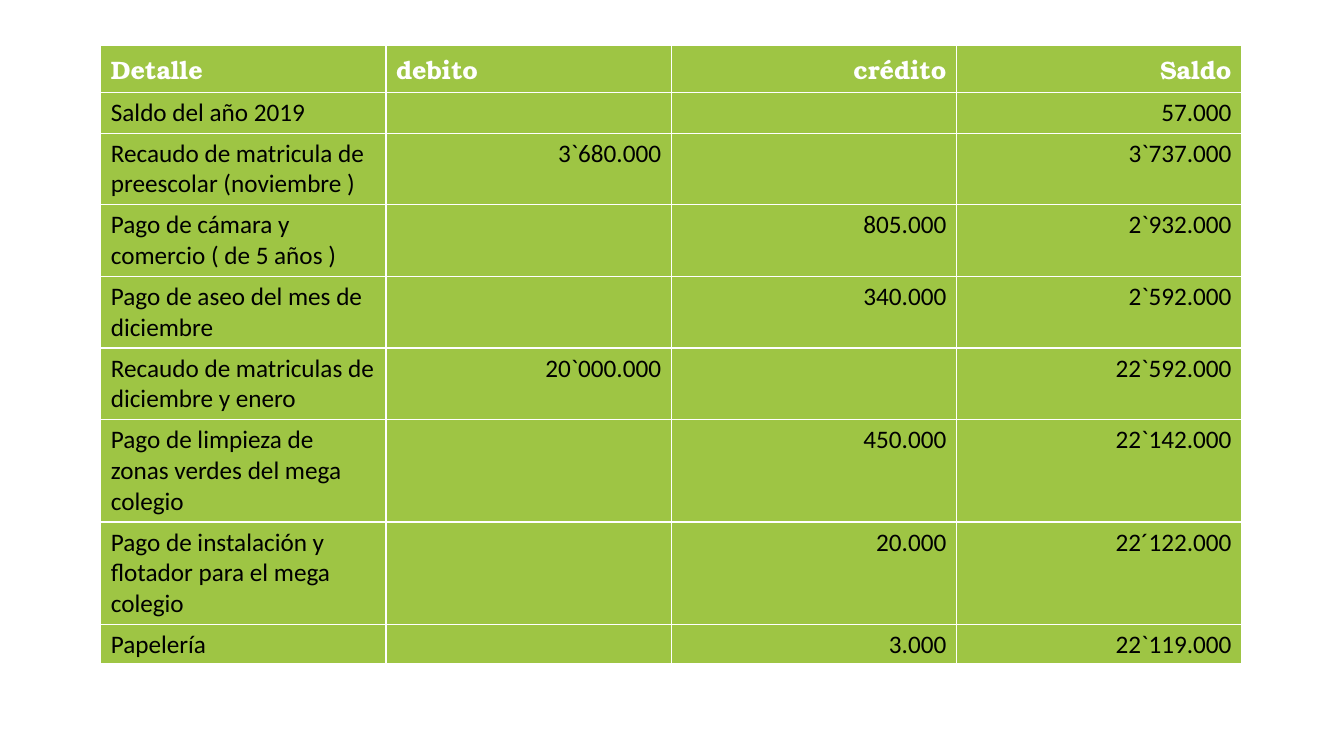
import pptx
import pptx.dml.color
import pptx.enum.text
import pptx.oxml.ns
import pptx.util
from lxml import etree

COLORS = {"background": "FFFFFF", "cell": "9EC544", "border": "FFFFFF",
          "heading": "FFFFFF", "body": "000000"}

HEADINGS = ("Detalle", "debito", "crédito", "Saldo")
ENTRIES = (
    (1, "Saldo del año 2019", "", "", "57.000"),
    (2, "Recaudo de matricula de preescolar (noviembre )", "3`680.000", "", "3`737.000"),
    (2, "Pago de cámara y comercio ( de 5 años )", "", "805.000", "2`932.000"),
    (2, "Pago de aseo del mes de diciembre", "", "340.000", "2`592.000"),
    (2, "Recaudo de matriculas de diciembre y enero", "20`000.000", "", "22`592.000"),
    (3, "Pago de limpieza de zonas verdes del mega colegio", "", "450.000", "22`142.000"),
    (3, "Pago de instalación y flotador para el mega colegio", "", "20.000", "22´122.000"),
    (1, "Papelería", "", "3.000", "22`119.000"),
)


def color(name):
    return pptx.dml.color.RGBColor.from_string(COLORS[name])


class LedgerSlide:
    heading_font = "TeX Gyre Bonum"
    body_font = "Calibri"
    font_size = 18
    row_height = 28.8
    line_height = 21.8

    def __init__(self, presentation):
        self.slide = presentation.slides.add_slide(presentation.slide_layouts[6])
        self.slide.background.fill.solid()
        self.slide.background.fill.fore_color.rgb = color("background")

    def add_border(self, cell, side, width):
        properties = cell._tc.get_or_add_tcPr()
        line = etree.SubElement(properties, pptx.oxml.ns.qn(f"a:ln{side}"),
                                w=str(pptx.util.Pt(width)))
        fill = etree.SubElement(line, pptx.oxml.ns.qn("a:solidFill"))
        etree.SubElement(fill, pptx.oxml.ns.qn("a:srgbClr"), val=COLORS["border"])

    def fill_cell(self, cell, text, heading, right_aligned, bottom_width):
        for side in "LRT":
            self.add_border(cell, side, 1)
        self.add_border(cell, "B", bottom_width)
        cell.fill.solid()
        cell.fill.fore_color.rgb = color("cell")
        cell.text_frame.text = text
        paragraph = cell.text_frame.paragraphs[0]
        paragraph.font.size = pptx.util.Pt(self.font_size)
        if right_aligned:
            paragraph.alignment = pptx.enum.text.PP_ALIGN.RIGHT
        for run in paragraph.runs:
            run.font.name = self.heading_font if heading else self.body_font
            run.font.size = pptx.util.Pt(self.font_size)
            run.font.bold = heading
            run.font.color.rgb = color("heading" if heading else "body")

    def add_table(self, left, top, width, headings, entries):
        rows = [(1, *headings), *entries]
        heights = [self.row_height + self.line_height * (lines - 1)
                   for lines, *_ in rows]
        table = self.slide.shapes.add_table(
            len(rows), len(headings), pptx.util.Pt(left), pptx.util.Pt(top),
            pptx.util.Pt(width), pptx.util.Pt(sum(heights))).table
        for column in table.columns:
            column.width = pptx.util.Pt(width / len(headings))
        for row_index, (lines, *texts) in enumerate(rows):
            table.rows[row_index].height = pptx.util.Pt(heights[row_index])
            heading = row_index == 0
            bottom_width = 3 if row_index == len(rows) - 1 else 1
            for column_index, text in enumerate(texts):
                right_aligned = column_index > (1 if heading else 0)
                self.fill_cell(table.cell(row_index, column_index), text,
                               heading, right_aligned, bottom_width)


def main():
    presentation = pptx.Presentation()
    presentation.slide_width = pptx.util.Pt(960)
    presentation.slide_height = pptx.util.Pt(540)
    ledger = LedgerSlide(presentation)
    ledger.add_table(72, 32.4, 815, HEADINGS, ENTRIES)
    presentation.save("out.pptx")


if __name__ == "__main__":
    main()
